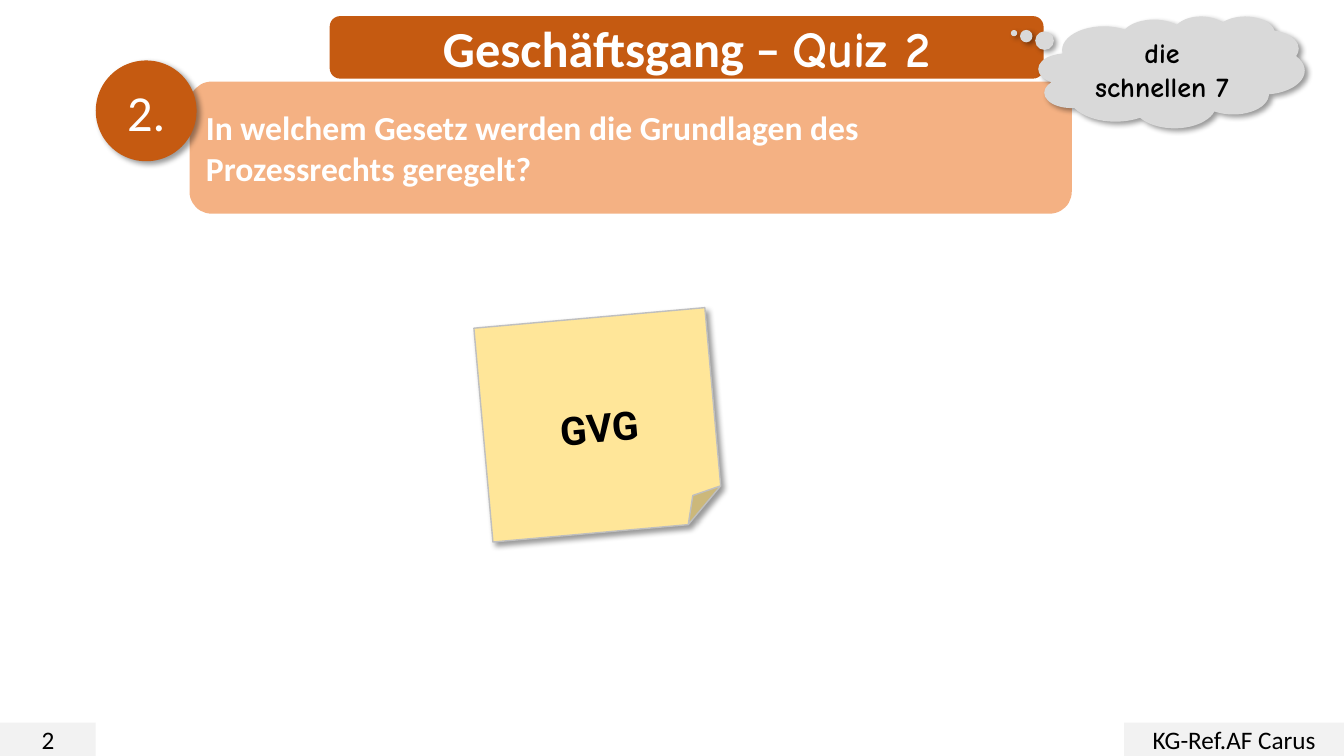
import pptx
import pptx.dml.color
import pptx.enum.shapes
import pptx.enum.text
import pptx.oxml
import pptx.oxml.ns
import pptx.util
from pptx.util import Inches

SHAPE = pptx.enum.shapes.MSO_SHAPE
ALIGN = pptx.enum.text.PP_ALIGN

TITLE = [("Geschäftsgang – ", "Calibri"), ("Quiz 2", "Comic Neue")]
QUESTION_NUMBER = "2."
QUESTION = "In welchem Gesetz werden die Grundlagen des Prozessrechts geregelt?"
ROUND_NAME = "die schnellen 7"
ANSWER = "GVG"
FOOTERS = [("2", 0, 0.95), ("KG-Ref.AF Carus", 11.15, 2.18)]

ORANGE, PEACH, YELLOW = "C55A11", "F4B183", "FFE699"
WHITE, BLACK = "FFFFFF", "000000"
PALE_GREY, GREY, EDGE_GREY = "F2F2F2", "D9D9D9", "BFBFBF"

SLIDE_WIDTH, SLIDE_HEIGHT = 13.33, 7.5
FOOTER_HEIGHT = 0.33


def color(hex_value):
    return pptx.dml.color.RGBColor.from_string(hex_value)


def add_shadow(shape):
    """Cast a soft shadow towards the lower right."""
    blur, distance = pptx.util.Pt(4), pptx.util.Pt(3)
    effects = pptx.oxml.parse_xml(
        f'<a:effectLst {pptx.oxml.ns.nsdecls("a")}>'
        f'<a:outerShdw blurRad="{blur}" dist="{distance}" dir="2700000" '
        f'algn="tl" rotWithShape="0"><a:srgbClr val="{BLACK}">'
        '<a:alpha val="40000"/></a:srgbClr></a:outerShdw></a:effectLst>')
    properties = shape.element.spPr
    properties.remove(properties.find(pptx.oxml.ns.qn("a:effectLst")))
    properties.append(effects)


def add_panel(parent, preset, box, fill, line=None, shadow=False):
    panel = parent.add_shape(preset, *map(Inches, box))
    panel.fill.solid()
    panel.fill.fore_color.rgb = color(fill)
    if line:
        panel.line.color.rgb = color(line)
        panel.line.width = pptx.util.Pt(1)
    else:
        panel.line.fill.background()
    panel.shadow.inherit = False
    if shadow:
        add_shadow(panel)
    return panel


def write(panel, text, size, font="Calibri", ink=BLACK, bold=False,
          align=ALIGN.CENTER):
    """Fill a panel with a string, or with (string, font) runs."""
    frame = panel.text_frame
    frame.word_wrap = True
    frame.vertical_anchor = pptx.enum.text.MSO_ANCHOR.MIDDLE
    paragraph = frame.paragraphs[0]
    paragraph.alignment = align
    for words, face in [(text, font)] if isinstance(text, str) else text:
        run = paragraph.add_run()
        run.text = words
        run.font.name = face
        run.font.size = pptx.util.Pt(size)
        run.font.bold = bold
        run.font.color.rgb = color(ink)


def main():
    deck = pptx.Presentation()
    deck.slide_width = Inches(SLIDE_WIDTH)
    deck.slide_height = Inches(SLIDE_HEIGHT)
    shapes = deck.slides.add_slide(deck.slide_layouts[6]).shapes

    title = add_panel(shapes, SHAPE.ROUNDED_RECTANGLE,
                      (3.27, 0.16, 7.08, 0.62), ORANGE)
    write(title, TITLE, 36, ink=WHITE, bold=True)

    for words, left, width in FOOTERS:
        box = (left, SLIDE_HEIGHT - FOOTER_HEIGHT, width, FOOTER_HEIGHT)
        write(add_panel(shapes, SHAPE.RECTANGLE, box, PALE_GREY), words, 18)

    question_group = shapes.add_group_shape().shapes
    question = add_panel(question_group, SHAPE.ROUNDED_RECTANGLE,
                         (1.88, 0.81, 8.75, 1.31), PEACH)
    write(question, QUESTION, 24, ink=WHITE, bold=True, align=ALIGN.LEFT)
    number = add_panel(question_group, SHAPE.OVAL, (0.95, 0.6, 1, 1), ORANGE,
                       shadow=True)
    write(number, QUESTION_NUMBER, 36, ink=WHITE)

    cloud = add_panel(shapes, SHAPE.CLOUD_CALLOUT, (10.3, 0.16, 2.64, 1.11),
                      GREY, shadow=True)
    cloud.adjustments[0], cloud.adjustments[1] = -0.592, -0.348
    write(cloud, ROUND_NAME, 20, font="Comic Neue", bold=True)

    note = add_panel(shapes, SHAPE.FOLDED_CORNER, (4.79, 3.15, 2.3, 2.13),
                     YELLOW, line=EDGE_GREY, shadow=True)
    note.rotation = 354.9
    note.text_frame.margin_top = Inches(0.45)
    write(note, ANSWER, 28, font="Roboto", bold=True)

    deck.save("out.pptx")


if __name__ == "__main__":
    main()
